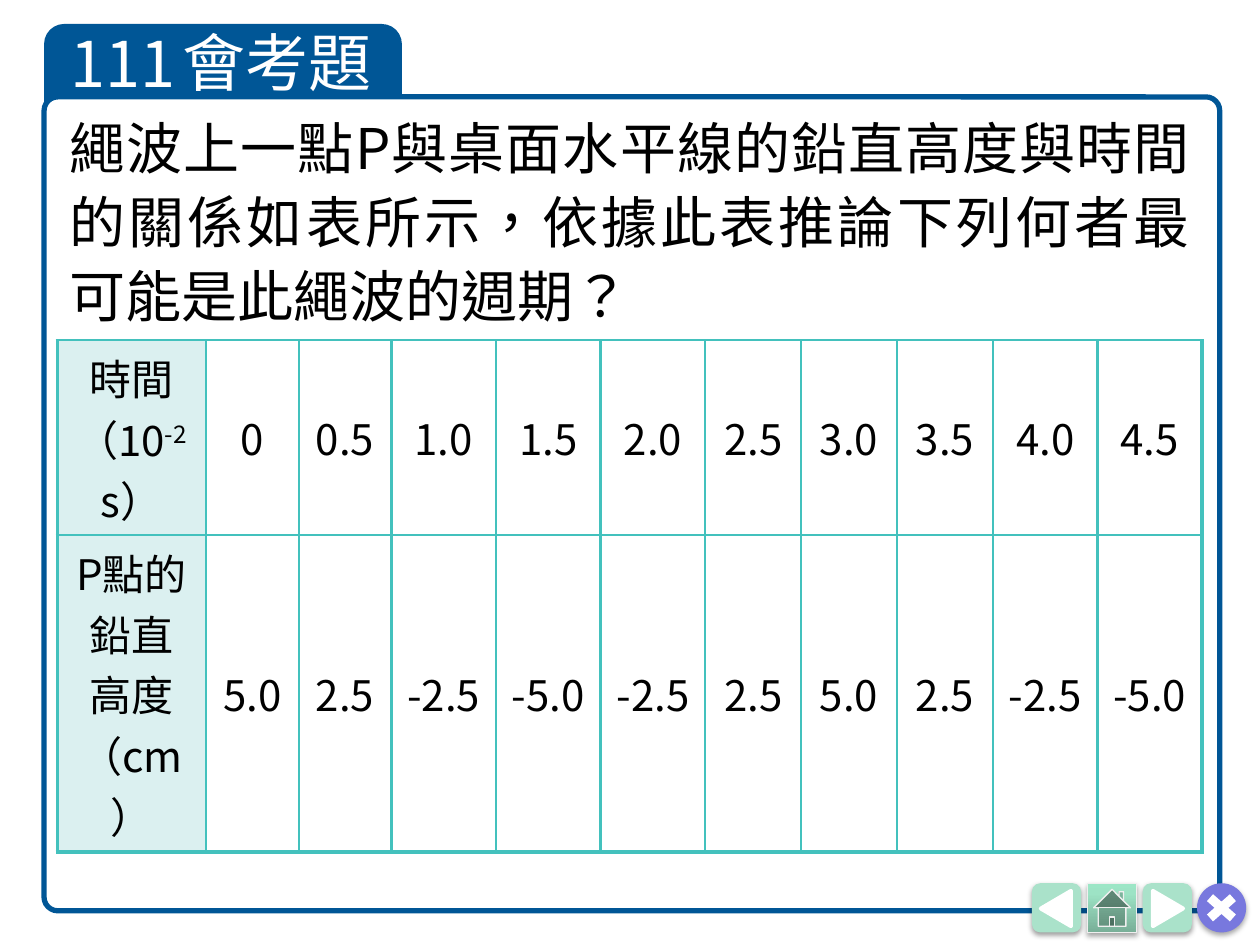
from lxml.etree import SubElement
from pptx import Presentation
from pptx.dml.color import RGBColor
from pptx.enum.shapes import MSO_SHAPE as Shape
from pptx.enum.text import MSO_ANCHOR as Anchor, MSO_AUTO_SIZE as AutoSize, PP_ALIGN as Align
from pptx.oxml import parse_xml
from pptx.oxml.ns import nsdecls, qn
from pptx.util import Pt

FONT = "Noto Sans CJK SC"
LANGUAGE = "zh-TW"
COLORS = {
    "navy": "005696", "white": "FFFFFF", "black": "000000", "teal": "43C1BD",
    "header": "DBF0F0", "mint": "AAE2CA", "violet": "7878DE", "home_edge": "EFEFEF",
}
HOME_GRADIENT = [(0, "79AF98"), (80, "9DE3C5"), (100, "9CE6C6")]

YEAR = "111"
EXAM = "會考題"
QUESTION = "繩波上一點P與桌面水平線的鉛直高度與時間的關係如表所示，依據此表推論下列何者最可能是此繩波的週期？"
MEASUREMENTS = [
    [["時間", ["（10", ("-2 ", 30), "s）"]],
     "0", "0.5", "1.0", "1.5", "2.0", "2.5", "3.0", "3.5", "4.0", "4.5"],
    [["P點的鉛直高度（cm）"],
     "5.0", "2.5", "-2.5", "-5.0", "-2.5", "2.5", "5.0", "2.5", "-2.5", "-5.0"],
]
COLUMN_WIDTHS = [85] + [53] * 2 + [59.8] * 3 + [54.8] * 3 + [59.8] * 2
ROW_HEIGHTS = [111.4, 181]
HEADER_MARGIN = 6.8
THIN, THICK = 1.5, 2.25

NAV_TOP, NAV_SIZE = 504.7, 28.1
NAV_LEFT = {"back": 589.7, "home": 621.4, "next": 653, "close": 684}


def rgb(name):
    return RGBColor.from_string(COLORS[name])


def write(frame, paragraphs, size=24, color="black", align=Align.CENTER, spacing=None):
    """Fill a text frame; a paragraph is a string or a list of runs, a run a string or (text, raise %)."""
    for index, content in enumerate(paragraphs):
        paragraph = frame.paragraphs[0] if index == 0 else frame.add_paragraph()
        paragraph.alignment = align
        if spacing:
            paragraph.line_spacing = spacing
        for piece in [content] if isinstance(content, str) else content:
            text, raised = (piece, 0) if isinstance(piece, str) else piece
            run = paragraph.add_run()
            run.text = text
            run.font.size = Pt(size)
            run.font.name = FONT
            run.font.color.rgb = rgb(color)
            properties = run._r.get_or_add_rPr()
            properties.set("lang", LANGUAGE)
            SubElement(properties, qn("a:ea"), typeface=FONT)
            if raised:
                properties.set("baseline", str(raised * 1000))


def draw(shapes, kind, box, fill, line=None, width=1, rotation=0, adjust=()):
    shape = shapes.add_shape(kind, *map(Pt, box))
    shape.shadow.inherit = False
    shape.fill.solid()
    shape.fill.fore_color.rgb = rgb(fill)
    if line:
        shape.line.color.rgb = rgb(line)
        shape.line.width = Pt(width)
    else:
        shape.line.fill.background()
    shape.rotation = rotation
    for index, value in enumerate(adjust):
        shape.adjustments[index] = value
    return shape


def cast_shadow(shape, opacity, distance):
    effects = shape._element.spPr.find(qn("a:effectLst"))
    effects.append(parse_xml(
        f'<a:outerShdw {nsdecls("a")} blurRad="{Pt(3.1)}" dist="{Pt(distance)}" dir="5400000" '
        f'rotWithShape="0"><a:srgbClr val="{COLORS["black"]}">'
        f'<a:alpha val="{opacity * 1000}"/></a:srgbClr></a:outerShdw>'))


def shade(shape, stops):
    shape.fill.gradient()
    properties = shape._element.spPr
    marks = "".join(f'<a:gs pos="{place * 1000}"><a:srgbClr val="{color}"/></a:gs>'
                    for place, color in stops)
    properties.replace(properties.find(qn("a:gradFill")), parse_xml(
        f'<a:gradFill {nsdecls("a")} rotWithShape="1"><a:gsLst>{marks}</a:gsLst>'
        f'<a:lin ang="16200000" scaled="0"/></a:gradFill>'))


def add_frame(slide):
    draw(slide.shapes, Shape.ROUND_2_SAME_RECTANGLE, (25.2, 13.7, 204.5, 46), "navy", adjust=(0.25, 0))
    exam = slide.shapes.add_textbox(Pt(25.2), Pt(5.8), Pt(204.5), Pt(55.4)).text_frame
    exam.word_wrap = True
    exam.margin_left, exam.margin_top = Pt(79), Pt(7.6)
    write(exam, [EXAM], size=36, color="white", align=Align.LEFT)
    draw(slide.shapes, Shape.ROUNDED_RECTANGLE, (25.2, 55.4, 671.8, 465.1), "white",
         line="navy", width=3, adjust=(0.017,))


def add_navigation(slide):
    def button(shapes, kind, name, fill, opacity, distance, **style):
        shape = draw(shapes, kind, (NAV_LEFT[name], NAV_TOP, NAV_SIZE, NAV_SIZE), fill, **style)
        cast_shadow(shape, opacity, distance)
        return shape

    for name, rotation, inset in (("back", 270, 3.6), ("next", 90, 4.3)):
        group = slide.shapes.add_group_shape().shapes
        button(group, Shape.ROUNDED_RECTANGLE, name, "mint", 38, 1.6)
        draw(group, Shape.ISOSCELES_TRIANGLE, (NAV_LEFT[name] + inset, 510.5, 20.2, 17.3), "white",
             line="white", width=2.25, rotation=rotation)
    group = slide.shapes.add_group_shape().shapes
    button(group, Shape.OVAL, "close", "violet", 35, 1.8)
    draw(group, Shape.MATH_MULTIPLY, (NAV_LEFT["close"] + 1.4, 507.6, 25.2, 22.3), "white")
    home = button(slide.shapes, Shape.ACTION_BUTTON_HOME, "home", "mint", 35, 1.8,
                  line="home_edge", width=0.75)
    shade(home, HOME_GRADIENT)


def set_borders(cell, widths):
    properties = cell._tc.get_or_add_tcPr()
    for index, (side, width) in enumerate(widths.items()):
        properties.insert(index, parse_xml(
            f'<a:ln{side} {nsdecls("a")} w="{Pt(width)}"><a:solidFill>'
            f'<a:srgbClr val="{COLORS["teal"]}"/></a:solidFill></a:ln{side}>'))


def add_measurements(slide):
    rows, columns = len(MEASUREMENTS), len(COLUMN_WIDTHS)
    table = slide.shapes.add_table(rows, columns, Pt(32.7), Pt(194.4),
                                   Pt(sum(COLUMN_WIDTHS)), Pt(sum(ROW_HEIGHTS))).table
    table.first_row = table.horz_banding = False
    for column, width in zip(table.columns, COLUMN_WIDTHS):
        column.width = Pt(width)
    for r, values in enumerate(MEASUREMENTS):
        table.rows[r].height = Pt(ROW_HEIGHTS[r])
        for c, value in enumerate(values):
            cell = table.cell(r, c)
            cell.vertical_anchor = Anchor.MIDDLE
            if c == 0:
                cell.margin_left = cell.margin_right = Pt(HEADER_MARGIN)
            cell.fill.solid()
            cell.fill.fore_color.rgb = rgb("white" if c else "header")
            set_borders(cell, {
                "L": THIN if c else THICK,
                "R": THICK if c == columns - 1 else THIN,
                "T": THIN,
                "B": THICK if r == rows - 1 else THIN,
            })
            write(cell.text_frame, [value] if isinstance(value, str) else value)


def main():
    deck = Presentation()
    deck.slide_width, deck.slide_height = Pt(720), Pt(540)
    slide = deck.slides.add_slide(deck.slide_layouts[5])
    add_frame(slide)
    add_navigation(slide)

    year = slide.shapes.title
    year.left, year.top, year.width, year.height = map(Pt, (25.2, 11.5, 90.7, 45.4))
    year.text_frame.auto_size = AutoSize.NONE
    year.text_frame.vertical_anchor = Anchor.MIDDLE
    year.text_frame.margin_top = Pt(6.6)
    write(year.text_frame, [YEAR], size=36, color="white")
    slide.shapes._spTree.append(year._element)

    question = slide.shapes.add_textbox(Pt(32.7), Pt(57.6), Pt(654.5), Pt(164.9)).text_frame
    question.word_wrap = True
    write(question, [QUESTION], size=32, align=Align.JUSTIFY, spacing=1.1)
    add_measurements(slide)
    deck.save("out.pptx")


if __name__ == "__main__":
    main()
